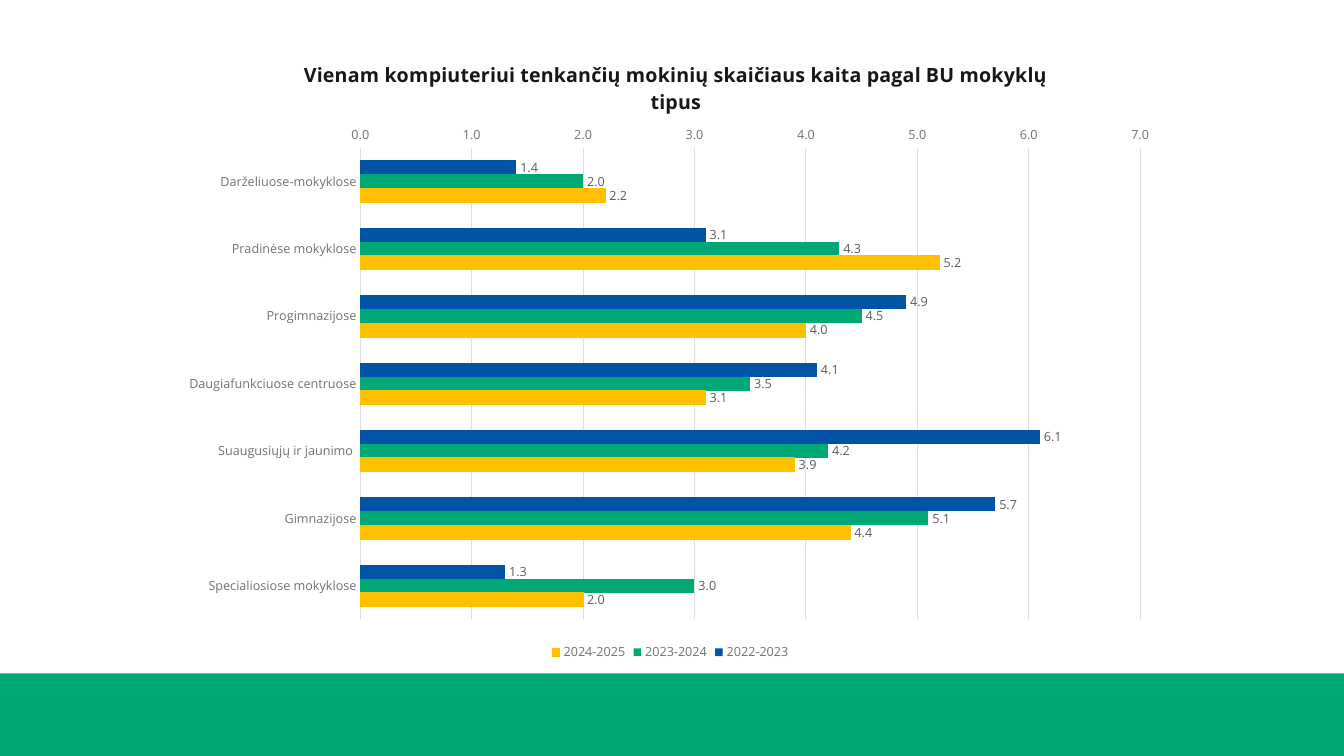
from dataclasses import dataclass
from lxml.etree import SubElement
from pptx import Presentation
from pptx.chart.data import CategoryChartData
from pptx.dml.color import RGBColor
from pptx.enum.chart import (XL_CHART_TYPE, XL_LABEL_POSITION,
                             XL_LEGEND_POSITION, XL_TICK_MARK)
from pptx.enum.shapes import MSO_SHAPE
from pptx.oxml.ns import qn
from pptx.util import Pt

FACE = "Open Sans"
HUES = {"green": "00A875", "blue": "0054A5", "gold": "FFC000", "title": "181717",
        "text": "262626", "axis": "727272", "label": "5C5C5C", "grid": "DEDEDE"}
TITLE = "Vienam kompiuteriui tenkančių mokinių skaičiaus kaita pagal BU mokyklų tipus"
TYPES = ["Darželiuose-mokyklose", "Pradinėse mokyklose", "Progimnazijose",
         "Daugiafunkciuose centruose", "Suaugusiųjų ir jaunimo ", "Gimnazijose",
         "Specialiosiose mokyklose"]


@dataclass
class Year:
    name: str
    hue: str
    vals: list[float]
    edge: bool = False


YEARS = [
    Year("2022-2023", "blue", [1.4, 3.1, 4.9, 4.1, 6.1, 5.7, 1.3]),
    Year("2023-2024", "green", [2.0, 4.3, 4.5, 3.5, 4.2, 5.1, 3.0]),
    Year("2024-2025", "gold", [2.2, 5.2, 4.0, 3.1, 3.9, 4.4, 2.0], True),
]


def color(name: str) -> RGBColor:
    return RGBColor.from_string(HUES[name])


def style(font, size: float, hue: str, bold: bool = False) -> None:
    font.name = FACE
    font.size = Pt(size)
    font.bold = bold
    font.color.rgb = color(hue)


def stroke(line, hue: str) -> None:
    line.color.rgb = color(hue)
    line.width = Pt(0.75)


def place(layout, **parts: object) -> None:
    for old in list(layout):
        layout.remove(old)
    box = SubElement(layout, qn("c:manualLayout"))
    for tag, val in parts.items():
        SubElement(box, qn(f"c:{tag}")).set("val", str(val))


def add_band(slide) -> None:
    band = slide.shapes.add_shape(MSO_SHAPE.RECTANGLE, 0, Pt(481), Pt(960), Pt(59))
    band.shadow.inherit = False
    band.fill.solid()
    band.fill.fore_color.rgb = color("green")
    band.line.fill.background()


def set_title(chart) -> None:
    chart.has_title = True
    title = chart.chart_title
    title.include_in_layout = False
    run = title.text_frame.paragraphs[0].add_run()
    run.text = TITLE
    style(run.font, 14, "title", True)
    node = chart._chartSpace.chart.find(qn("c:title"))
    layout = node.find(qn("c:layout"))
    if layout is None:
        layout = SubElement(node, qn("c:layout"))
        node.find(qn("c:tx")).addnext(layout)
    place(layout, xMode="edge", yMode="edge", x=0.13, y=0.04)


def set_axes(chart) -> None:
    for axis in (chart.category_axis, chart.value_axis):
        axis.major_tick_mark = axis.minor_tick_mark = XL_TICK_MARK.NONE
        style(axis.tick_labels.font, 9, "axis")
    types, scale = chart.category_axis, chart.value_axis
    types.reverse_order = True
    types.has_major_gridlines = False
    stroke(types.format.line, "grid")
    scale.minimum_scale, scale.maximum_scale, scale.major_unit = 0, 7, 1
    scale.has_major_gridlines = True
    stroke(scale.major_gridlines.format.line, "grid")
    scale.format.line.fill.background()
    scale.tick_labels.number_format = "0.0"
    scale.tick_labels.number_format_is_linked = False


def set_bars(chart) -> None:
    plot = chart.plots[0]
    plot.gap_width = 182
    plot.overlap = 0
    plot.vary_by_categories = False
    for year, bar in zip(YEARS, plot.series):
        bar.format.fill.solid()
        bar.format.fill.fore_color.rgb = color(year.hue)
        if year.edge:
            stroke(bar.format.line, year.hue)
        tags = bar.data_labels
        tags.show_value = True
        tags.number_format = "0.0"
        tags.number_format_is_linked = False
        tags.position = XL_LABEL_POSITION.OUTSIDE_END
        style(tags.font, 9, "label")


def add_bars(slide) -> None:
    data = CategoryChartData(number_format="0.0")
    data.categories = TYPES
    for year in YEARS:
        data.add_series(year.name, year.vals)
    chart = slide.shapes.add_chart(XL_CHART_TYPE.BAR_CLUSTERED, Pt(121.7), Pt(21.6),
                                   Pt(714.2), Pt(453.6), data).chart
    style(chart.font, 10, "text")
    set_title(chart)
    set_axes(chart)
    set_bars(chart)
    chart.has_legend = True
    chart.legend.position = XL_LEGEND_POSITION.BOTTOM
    chart.legend.include_in_layout = False
    style(chart.legend.font, 9, "axis")
    area = chart._chartSpace.chart.plotArea
    layout = area.find(qn("c:layout"))
    if layout is None:
        layout = SubElement(area, qn("c:layout"))
        area.insert(0, layout)
    place(layout, layoutTarget="inner", xMode="edge", yMode="edge",
          x=0.19, y=0.185, w=0.78, h=0.743)


def main() -> None:
    deck = Presentation()
    deck.slide_width, deck.slide_height = Pt(960), Pt(540)
    slide = deck.slides.add_slide(deck.slide_layouts[6])
    add_band(slide)
    add_bars(slide)
    deck.save("out.pptx")


if __name__ == "__main__":
    main()
